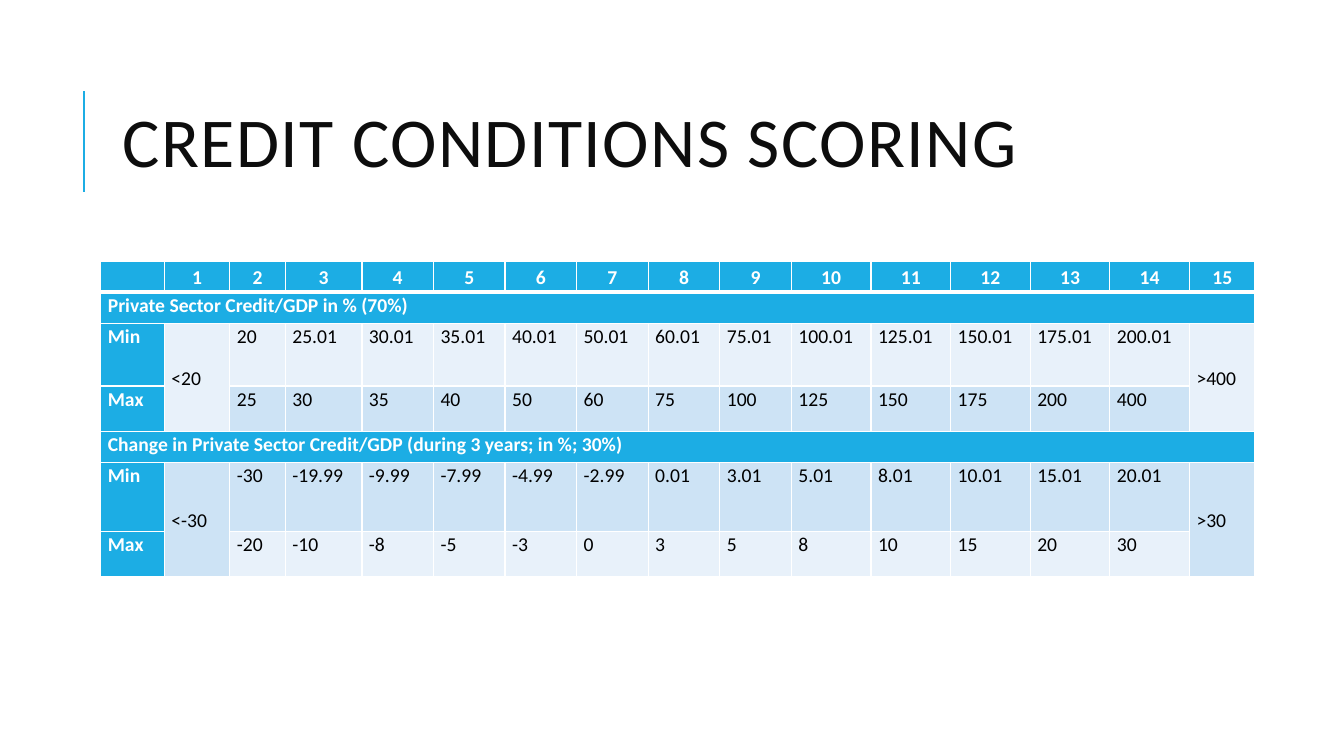
"""Build the credit conditions scoring slide."""
from lxml.etree import SubElement
from pptx import Presentation
from pptx.dml.color import RGBColor
from pptx.enum.shapes import MSO_CONNECTOR
from pptx.enum.text import MSO_ANCHOR, PP_ALIGN
from pptx.oxml.ns import qn
from pptx.util import Inches, Pt

BLUE = RGBColor(0x1C, 0xAD, 0xE4)
PALE = RGBColor(0xE8, 0xF1, 0xFA)
MID = RGBColor(0xCD, 0xE3, 0xF5)
WHITE = RGBColor(0xFF, 0xFF, 0xFF)
BLACK = RGBColor(0, 0, 0)
INK = RGBColor(0x0D, 0x0D, 0x0D)
FONT = "Calibri"

TITLE = "CREDIT CONDITIONS SCORING"
ROWS = [
    [""] + [str(n) for n in range(1, 16)],
    ["Private Sector Credit/GDP in % (70%)"],
    ["Min", "<20", "20", "25.01", "30.01", "35.01", "40.01", "50.01", "60.01",
     "75.01", "100.01", "125.01", "150.01", "175.01", "200.01", ">400"],
    ["Max", "", "25", "30", "35", "40", "50", "60", "75",
     "100", "125", "150", "175", "200", "400", ""],
    ["Change in Private Sector Credit/GDP (during 3 years; in %; 30%)"],
    ["Min", "<-30", "-30", "-19.99", "-9.99", "-7.99", "-4.99", "-2.99", "0.01",
     "3.01", "5.01", "8.01", "10.01", "15.01", "20.01", ">30"],
    ["Max", "", "-20", "-10", "-8", "-5", "-3", "0", "3",
     "5", "8", "10", "15", "20", "30", ""],
]
BANDS = [BLUE, BLUE, PALE, MID, BLUE, MID, PALE]
WIDTHS = [0.63, 0.65, 0.55, 0.76] + [0.71] * 6 + [0.79] * 5 + [0.65]
HEIGHTS = [0.31, 0.31, 0.62, 0.45, 0.31, 0.68, 0.45]
LAST = len(WIDTHS) - 1


def set_font(para, size, color, bold=False):
    font = para.font
    font.name, font.size, font.bold = FONT, Pt(size), bold
    font.color.rgb = color


def add_edge(cell, side, width):
    line = SubElement(cell._tc.get_or_add_tcPr(), qn(f"a:ln{side}"), w=str(Pt(width)))
    fill = SubElement(line, qn("a:solidFill"))
    SubElement(fill, qn("a:srgbClr"), val=str(WHITE))


def style_cell(cell, row, col, text):
    head = BANDS[row] == BLUE or col == 0
    cell.margin_left = cell.margin_right = Inches(0.07)
    cell.margin_top = cell.margin_bottom = 0
    mid = row == 0 or (not head and col in (1, LAST))
    cell.vertical_anchor = MSO_ANCHOR.MIDDLE if mid else MSO_ANCHOR.TOP
    for side in "LRTB":
        thick = (row, side) in ((0, "B"), (1, "T"))
        add_edge(cell, side, 3 if thick else 1)
    cell.fill.solid()
    cell.fill.fore_color.rgb = BLUE if head else BANDS[row]
    para = cell.text_frame.paragraphs[0]
    if text:
        para.text = text
    para.line_spacing = 1.07
    para.alignment = PP_ALIGN.CENTER if row == 0 else PP_ALIGN.LEFT
    set_font(para, 14, WHITE if head else BLACK, head)


def add_title(slide):
    rule = slide.shapes.add_connector(
        MSO_CONNECTOR.STRAIGHT, Inches(0.83), Inches(1.9), Inches(0.83), Inches(0.9))
    rule.line.color.rgb = BLUE
    rule.line.width = Pt(1.5)
    SubElement(rule._element.spPr, qn("a:effectLst"))
    box = slide.shapes.add_textbox(Inches(1.12), Inches(0.64), Inches(10.63), Inches(1.64))
    frame = box.text_frame
    frame.word_wrap = True
    frame.vertical_anchor = MSO_ANCHOR.MIDDLE
    para = frame.paragraphs[0]
    para.text = TITLE
    para.line_spacing = 0.8
    set_font(para, 50, INK)
    para.runs[0]._r.get_or_add_rPr().set("spc", "100")


def add_scores(slide):
    table = slide.shapes.add_table(
        len(ROWS), len(WIDTHS), Inches(1), Inches(2.59),
        Inches(sum(WIDTHS)), Inches(sum(HEIGHTS))).table
    for col, width in enumerate(WIDTHS):
        table.columns[col].width = Inches(width)
    for row, texts in enumerate(ROWS):
        table.rows[row].height = Inches(HEIGHTS[row])
        for col in range(len(WIDTHS)):
            text = texts[col] if col < len(texts) else ""
            style_cell(table.cell(row, col), row, col, text)
        if len(texts) == 1:
            table.cell(row, 0).merge(table.cell(row, LAST))
        if texts[0] == "Min":
            for col in (1, LAST):
                table.cell(row, col).merge(table.cell(row + 1, col))


def main():
    deck = Presentation()
    deck.slide_width, deck.slide_height = Inches(13.33), Inches(7.5)
    slide = deck.slides.add_slide(deck.slide_layouts[6])
    add_title(slide)
    add_scores(slide)
    deck.save("out.pptx")


if __name__ == "__main__":
    main()
